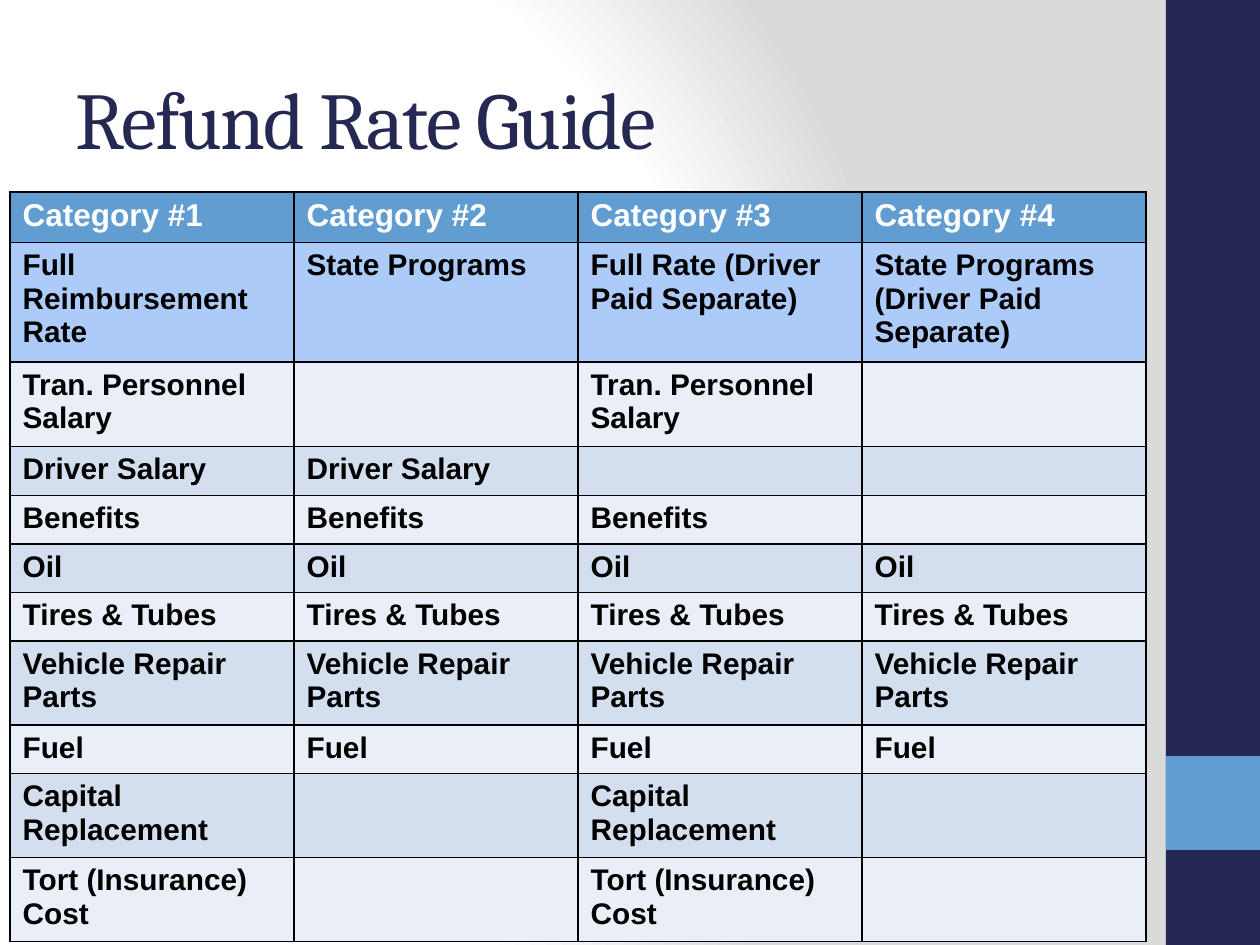
from lxml.etree import SubElement
from pptx import Presentation
from pptx.dml.color import RGBColor as RGB
from pptx.enum.shapes import MSO_SHAPE as SHAPE
from pptx.enum.text import MSO_ANCHOR as ANCHOR
from pptx.oxml import parse_xml
from pptx.oxml.ns import nsdecls, qn
from pptx.util import Emu, Pt

NAVY = RGB(0x24, 0x28, 0x52)
BLUE = RGB(0x62, 0x9D, 0xD1)
SKY = RGB(0xAC, 0xCB, 0xF9)
PALE = RGB(0xEA, 0xEF, 0xF7)
MIST = RGB(0xD3, 0xDF, 0xEE)
GREY = RGB(0xDA, 0xDA, 0xDA)
WHITE = RGB(0xFF, 0xFF, 0xFF)
BLACK = RGB(0, 0, 0)

ALL, DRIVER_INCLUDED, FULL_RATE = (0, 1, 2, 3), (0, 1), (0, 2)
COSTS = [
    ("Tran. Personnel Salary", FULL_RATE, 79),
    ("Driver Salary", DRIVER_INCLUDED, 49),
    ("Benefits", (0, 1, 2), 49),
    ("Oil", ALL, 46),
    ("Tires & Tubes", ALL, 46),
    ("Vehicle Repair Parts", ALL, 79),
    ("Fuel", ALL, 46),
    ("Capital Replacement", FULL_RATE, 79),
    ("Tort (Insurance) Cost", FULL_RATE, 79),
]
ROWS = [
    ([f"Category #{n}" for n in range(1, 5)], 48),
    (["Full Reimbursement Rate", "State Programs", "Full Rate (Driver Paid Separate)",
      "State Programs (Driver Paid Separate)"], 113),
] + [([name if c in paid else "" for c in ALL], height) for name, paid, height in COSTS]


def px(n):
    return Emu(round(n * 914400 / 126))


def write(tf, text, size=17, font="Arial", color=BLACK, bold=False, spacing=None):
    p = tf.paragraphs[0]
    if not text:
        SubElement(p._p, qn("a:endParaRPr"), sz=str(size * 100))
        return
    r = p.add_run()
    r.text = text
    r.font.size, r.font.name, r.font.bold = Pt(size), font, bold
    r.font.color.rgb = color
    if spacing is not None:
        r._r.get_or_add_rPr().set("spc", str(spacing))


class Deck:
    """Slide style and the slide being drawn."""

    def __init__(self, width, height):
        self.prs = Presentation()
        self.prs.slide_width, self.prs.slide_height = px(width), px(height)
        self.s = self.prs.slides.add_slide(self.prs.slide_layouts[6])

    def background(self, stops):
        self.s.background.fill.solid()
        bg = self.s.element.find(".//" + qn("p:bgPr"))
        gs = "".join(f'<a:gs pos="{pos * 1000}"><a:srgbClr val="{color}"/></a:gs>'
                     for pos, color in stops)
        bg.replace(bg[0], parse_xml(
            f'<a:gradFill {nsdecls("a")} rotWithShape="1"><a:gsLst>{gs}</a:gsLst>'
            '<a:path path="circle"><a:fillToRect l="20000" t="50000" r="100000" b="50000"/>'
            '</a:path></a:gradFill>'))

    def rect(self, x, y, w, h, color):
        sp = self.s.shapes.add_shape(SHAPE.RECTANGLE, px(x), px(y), px(w), px(h))
        sp.shadow.inherit = False
        sp.fill.solid()
        sp.fill.fore_color.rgb = color
        sp.line.fill.background()

    def text(self, x, y, w, h, text, **fmt):
        tf = self.s.shapes.add_textbox(px(x), px(y), px(w), px(h)).text_frame
        tf.word_wrap = True
        tf.vertical_anchor = ANCHOR.MIDDLE
        write(tf, text, **fmt)

    def borders(self, cell):
        tc = cell._tc.get_or_add_tcPr()
        for side in "LRTB":
            tc.append(parse_xml(
                f'<a:ln{side} {nsdecls("a")} w="{Pt(1)}"><a:solidFill>'
                f'<a:srgbClr val="{BLACK}"/></a:solidFill></a:ln{side}>'))

    def table(self, x, y, col_width, rows):
        cols = len(rows[0][0])
        height = sum(h for _, h in rows)
        table = self.s.shapes.add_table(
            len(rows), cols, px(x), px(y), px(col_width * cols), px(height)).table
        for col in table.columns:
            col.width = px(col_width)
        for i, (texts, h) in enumerate(rows):
            table.rows[i].height = px(h)
            fill = (BLUE, SKY)[i] if i < 2 else (PALE, MIST)[i % 2]
            fmt = {"size": 18, "color": WHITE} if i == 0 else {}
            for j, text in enumerate(texts):
                cell = table.cell(i, j)
                self.borders(cell)
                cell.fill.solid()
                cell.fill.fore_color.rgb = fill
                write(cell.text_frame, text, bold=True, **fmt)


def main():
    deck = Deck(1260, 945)
    deck.background([(0, WHITE), (75, WHITE), (100, GREY)])
    deck.rect(1166, 0, 94, 945, NAVY)
    deck.rect(1166, 756, 94, 94, BLUE)
    deck.text(63, 38, 1050, 158, "Refund Rate Guide",
              size=46, font="Cambria", color=NAVY, spacing=-100)
    deck.table(10, 192, 284, ROWS)
    deck.prs.save("out.pptx")


if __name__ == "__main__":
    main()
